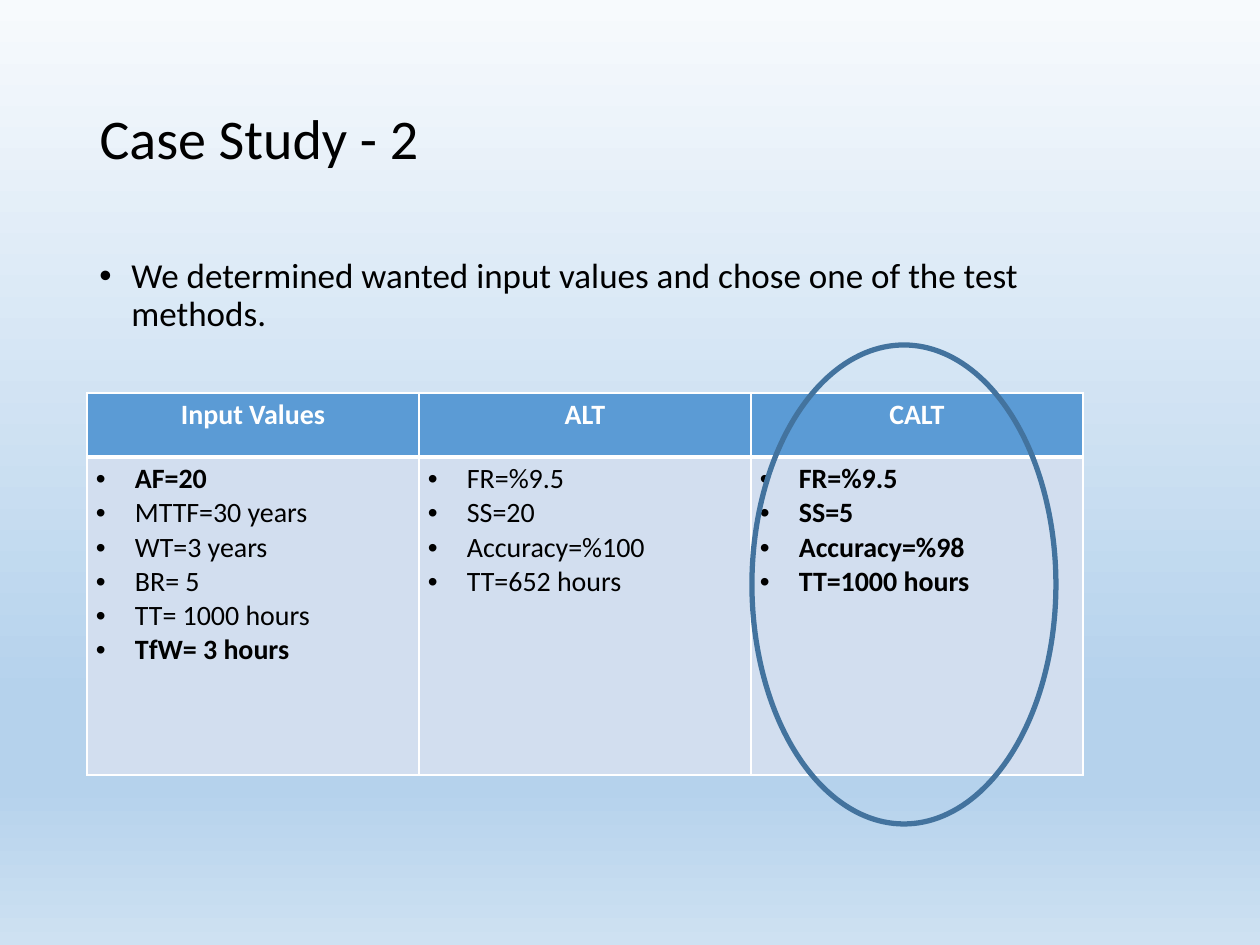
from lxml.etree import SubElement
from pptx import Presentation
from pptx.dml.color import RGBColor
from pptx.enum.shapes import MSO_SHAPE
from pptx.enum.text import MSO_ANCHOR, PP_ALIGN
from pptx.oxml.ns import qn
from pptx.util import Emu, Pt

PX = 914400 / 126
BLACK = RGBColor(0x00, 0x00, 0x00)
WHITE = RGBColor(0xFF, 0xFF, 0xFF)
HEADER_BLUE = RGBColor(0x5B, 0x9B, 0xD5)
CELL_BLUE = RGBColor(0xD2, 0xDE, 0xEF)
RING_BLUE = RGBColor(0x43, 0x73, 0x9E)
SKY = [(0, RGBColor(0xF7, 0xFA, 0xFD)), (74, RGBColor(0xB5, 0xD2, 0xEC)),
       (83, RGBColor(0xB5, 0xD2, 0xEC)), (100, RGBColor(0xCE, 0xE1, 0xF2))]


def px(*lengths):
    return [Emu(round(v * PX)) for v in lengths]


def write(p, text, size, color=BLACK, bold=False, indent=0):
    """Add a run to p; an indent in px makes it a bulleted paragraph."""
    r = p.add_run()
    r.text = text
    for name, value in {"name": "Calibri", "size": Pt(size), "bold": bold}.items():
        setattr(r.font, name, value)
    r.font.color.rgb = color
    if indent:
        hang = px(indent)[0]
        pPr = p._p.get_or_add_pPr()
        pPr.set("marL", str(hang))
        pPr.set("indent", str(-hang))
        SubElement(pPr, qn("a:buFont"), typeface="Arial")
        SubElement(pPr, qn("a:buChar"), char="•")


prs = Presentation()
prs.slide_width, prs.slide_height = px(1260, 945)
s = prs.slides.add_slide(prs.slide_layouts[5])

# Background
fill = s.background.fill
fill.gradient()
fill.gradient_angle = 270  # counter-clockwise, so top to bottom
stops = fill._fill._gradFill.find(qn("a:gsLst"))
for stop in list(stops):
    stops.remove(stop)
for percent, color in SKY:
    stop = SubElement(stops, qn("a:gs"), pos=str(percent * 1000))
    SubElement(stop, qn("a:srgbClr"), val=str(color))

# Title
title = s.shapes.title
title.left, title.top, title.width, title.height = px(87, 50, 1086, 183)
title.text_frame.vertical_anchor = MSO_ANCHOR.MIDDLE
p = title.text_frame.paragraphs[0]
p.alignment = PP_ALIGN.LEFT
p.line_spacing = 0.9
write(p, "Case Study - 2", 32)

# Statement
tf = s.shapes.add_textbox(*px(87, 252, 1086, 600)).text_frame
tf.word_wrap = True
p = tf.paragraphs[0]
p.line_spacing = 0.9
p.space_before = Pt(10)
write(p, "We determined wanted input values and chose one of the test methods.",
      20, indent=32)

# Table: header, then lines with their bold flag
columns = [
    ("Input Values", [("AF=20", True), ("MTTF=30 years", False),
                      ("WT=3 years", False), ("BR= 5", False),
                      ("TT= 1000 hours", False), ("TfW= 3 hours", True)]),
    ("ALT", [("FR=%9.5", False), ("SS=20", False),
             ("Accuracy=%100", False), ("TT=652 hours", False)]),
    ("CALT", [("FR=%9.5", True), ("SS=5", True),
              ("Accuracy=%98", True), ("TT=1000 hours", True)]),
]
table = s.shapes.add_table(2, 3, *px(87, 393, 996, 382)).table
for row, height in zip(table.rows, px(64, 318)):
    row.height = height
for col, (header, lines) in enumerate(columns):
    table.columns[col].width = px(332)[0]
    head, body = table.cell(0, col), table.cell(1, col)
    for cell, color, thick in ((head, HEADER_BLUE, "lnB"), (body, CELL_BLUE, "lnT")):
        cell.margin_left, cell.margin_right = px(9, 9)
        cell.margin_top, cell.margin_bottom = px(5, 5)
        tcPr = cell._tc.get_or_add_tcPr()
        for side in ("lnL", "lnR", "lnT", "lnB"):
            width = Pt(3 if side == thick else 1)
            ln = SubElement(tcPr, qn(f"a:{side}"), w=str(width))
            SubElement(SubElement(ln, qn("a:solidFill")), qn("a:srgbClr"), val=str(WHITE))
        cell.fill.solid()
        cell.fill.fore_color.rgb = color
    p = head.text_frame.paragraphs[0]
    p.alignment = PP_ALIGN.CENTER
    write(p, header, 16, WHITE, bold=True)
    tf = body.text_frame
    for i, (text, bold) in enumerate(lines):
        p = tf.add_paragraph() if i else tf.paragraphs[0]
        write(p, text, 16, bold=bold, indent=39)

# Ring around the chosen method
ring = s.shapes.add_shape(MSO_SHAPE.OVAL, *px(752, 345, 304, 479))
ring.shadow.inherit = False
ring.fill.background()
ring.line.color.rgb = RING_BLUE
ring.line.width = Pt(3)

prs.save("out.pptx")
